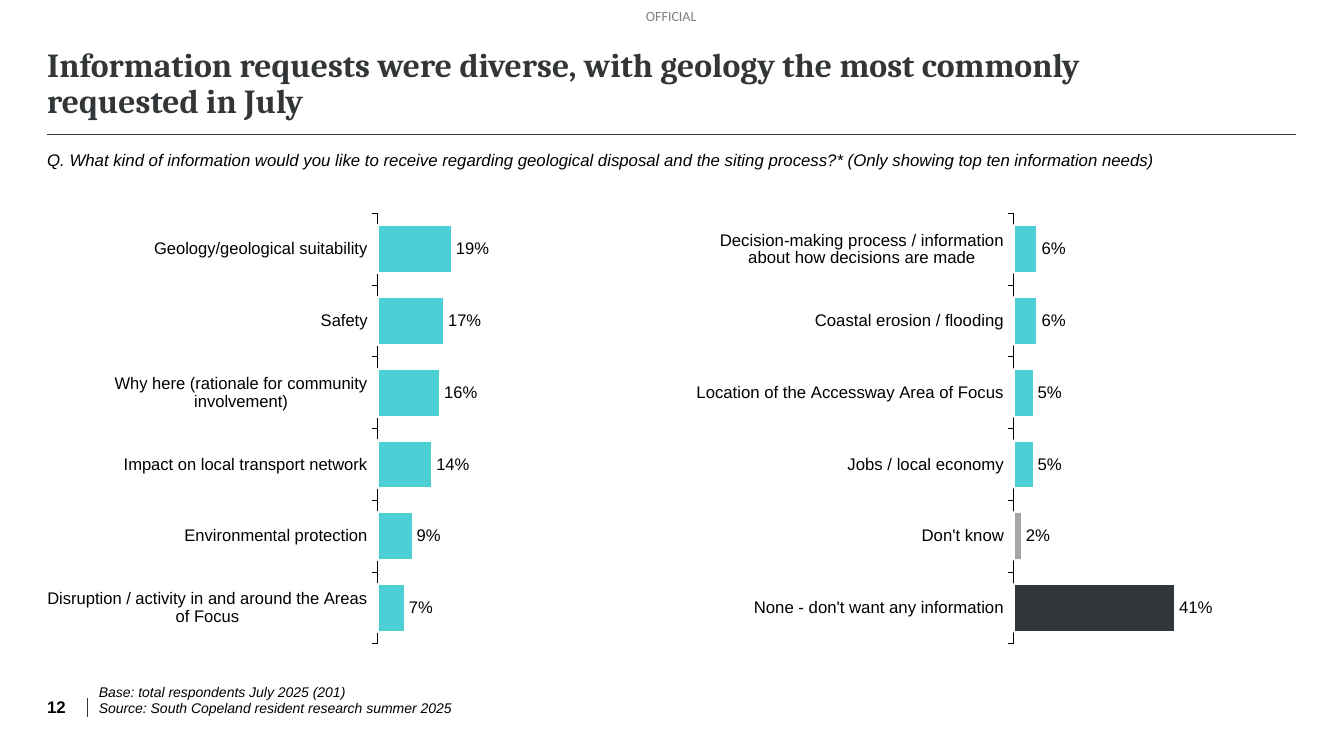
from lxml import etree
from pptx import Presentation
from pptx.chart.data import CategoryChartData
from pptx.dml.color import RGBColor
from pptx.enum.chart import XL_CHART_TYPE, XL_LABEL_POSITION, XL_TICK_MARK
from pptx.enum.shapes import MSO_CONNECTOR
from pptx.enum.text import MSO_ANCHOR, MSO_AUTO_SIZE, PP_ALIGN
from pptx.oxml import parse_xml
from pptx.oxml.ns import nsdecls, qn
from pptx.util import Cm, Pt

BAR_CLUSTERED = XL_CHART_TYPE.BAR_CLUSTERED
OUTSIDE_END = XL_LABEL_POSITION.OUTSIDE_END
TICK_OUTSIDE = XL_TICK_MARK.OUTSIDE
STRAIGHT = MSO_CONNECTOR.STRAIGHT
TOP, BOTTOM = MSO_ANCHOR.TOP, MSO_ANCHOR.BOTTOM
NO_AUTOFIT = MSO_AUTO_SIZE.NONE
LEFT = PP_ALIGN.LEFT

BLACK, DARK, TEAL, GREY, WHITE = "000000", "323638", "4DCFD6", "A6A6A6", "FFFFFF"
MARGIN = 1.19


def style_font(font, size, color=BLACK, name="Arial", bold=False, italic=False):
    font.name, font.size = name, Pt(size)
    font.bold, font.italic = bold, italic
    font.color.rgb = RGBColor.from_string(color)


def fill_text(shape, box, lines, anchor, size, **style):
    shape.left, shape.top, shape.width, shape.height = (Cm(v) for v in box)
    frame = shape.text_frame
    frame.margin_left = frame.margin_top = frame.margin_right = frame.margin_bottom = 0
    frame.word_wrap = True
    frame.auto_size = NO_AUTOFIT
    frame.vertical_anchor = anchor
    for index, line in enumerate(lines):
        paragraph = frame.add_paragraph() if index else frame.paragraphs[0]
        paragraph.alignment = LEFT
        run = paragraph.add_run()
        run.text = line
        style_font(run.font, size, **style)
    return frame.paragraphs[0]


prs = Presentation()
prs.slide_width, prs.slide_height = Cm(33.87), Cm(19.05)
slide = prs.slides.add_slide(prs.slide_layouts[5])
shapes = slide.shapes

headline = fill_text(
    shapes.title, (MARGIN, 1.65, 28.78, 1.4),
    ["Information requests were diverse, with geology the most commonly requested in July"],
    BOTTOM, 24, color=DARK, name="Cambria", bold=True)
headline.line_spacing = 0.9
headline.space_before = Pt(0)

rules = [
    (MARGIN, 3.4, 32.66, 3.4, 0.75),
    (2.2, 17.6, 2.2, 18.08, 0.5),
]
for x1, y1, x2, y2, weight in rules:
    rule = shapes.add_connector(STRAIGHT, Cm(x1), Cm(y1), Cm(x2), Cm(y2))
    rule.line.color.rgb = RGBColor.from_string(DARK)
    rule.line.width = Pt(weight)
    etree.SubElement(rule._element.spPr, qn("a:effectLst"))

marking = fill_text(shapes.add_textbox(0, 0, 0, 0), (16.28, 0.18, 1.4, 0.43),
                    ["OFFICIAL"], TOP, 10, name="Calibri")
marking_color = marking._p.find(".//" + qn("a:srgbClr"))
etree.SubElement(marking_color, qn("a:alpha")).set("val", "50000")

question = fill_text(
    shapes.add_textbox(0, 0, 0, 0), (MARGIN, 3.71, 30.53, 0.91),
    ["Q. What kind of information would you like to receive regarding geological disposal "
     "and the siting process?* (Only showing top ten information needs)"],
    TOP, 12, italic=True)
question.line_spacing = 1.13
question.space_after = Pt(10)

top_needs = [
    ("Geology/geological suitability", 0.19),
    ("Safety", 0.17),
    ("Why here (rationale for community involvement)", 0.16),
    ("Impact on local transport network", 0.14),
    ("Environmental protection", 0.09),
    ("Disruption / activity in and around the Areas of Focus", 0.07),
]
other_needs = [
    ("Decision-making process / information about how decisions are made", 0.06),
    ("Coastal erosion / flooding", 0.06),
    ("Location of the Accessway Area of Focus", 0.05),
    ("Jobs / local economy", 0.05),
    ("Don't know", 0.02),
    ("None - don't want any information", 0.41),
]
panels = [
    (top_needs, 1.19, 16.05, 0.512, 0.437, {}),
    (other_needs, 17.55, 15.37, 0.52, 0.452, {4: GREY, 5: DARK}),
]
for needs, left, width, plot_x, plot_w, highlights in panels:
    data = CategoryChartData(number_format="0%")
    data.categories = [need for need, share in needs]
    data.add_series("Series 1", [share for need, share in needs])
    chart = shapes.add_chart(BAR_CLUSTERED, Cm(left), Cm(5.16), Cm(width), Cm(11.35), data).chart
    chart.has_legend = chart.has_title = False
    style_font(chart.font, 10, color=DARK)

    category_axis = chart.category_axis
    category_axis.reverse_order = True
    category_axis.major_tick_mark = TICK_OUTSIDE
    category_axis.format.line.color.rgb = RGBColor.from_string(BLACK)
    category_axis.format.line.width = Pt(0.75)
    style_font(category_axis.tick_labels.font, 12)

    value_axis = chart.value_axis
    value_axis.minimum_scale, value_axis.maximum_scale = 0, 0.7
    value_axis.has_major_gridlines = False
    value_axis.visible = False

    plot = chart.plots[0]
    plot.gap_width = 50
    plot.vary_by_categories = False
    shares = plot.series[0]
    shares.invert_if_negative = False
    bars = [(shares, TEAL)] + [(shares.points[i], c) for i, c in highlights.items()]
    for bar, color in bars:
        bar.format.fill.solid()
        bar.format.fill.fore_color.rgb = RGBColor.from_string(color)
        bar.format.line.color.rgb = RGBColor.from_string(WHITE)
        bar.format.line.width = Pt(1.5)

    labels = shares.data_labels
    labels.show_value = True
    labels.position = OUTSIDE_END
    labels.number_format, labels.number_format_is_linked = "0%", False
    style_font(labels.font, 12)

    plot_area = chart._chartSpace.chart.plotArea
    for automatic in plot_area.findall(qn("c:layout")):
        plot_area.remove(automatic)
    plot_area.insert(0, parse_xml(
        f'<c:layout {nsdecls("c")}><c:manualLayout><c:layoutTarget val="inner"/>'
        f'<c:xMode val="edge"/><c:yMode val="edge"/><c:x val="{plot_x}"/><c:y val="0.019"/>'
        f'<c:w val="{plot_w}"/><c:h val="0.956"/></c:manualLayout></c:layout>'))

fill_text(shapes.add_textbox(0, 0, 0, 0), (MARGIN, 17.15, 0.79, 0.91),
          ["12"], BOTTOM, 12, bold=True)
fill_text(shapes.add_textbox(0, 0, 0, 0), (2.49, 17.15, 20.14, 0.91),
          ["Base: total respondents July 2025 (201)",
           "Source: South Copeland resident research summer 2025"],
          BOTTOM, 10, italic=True)

prs.save("out.pptx")
